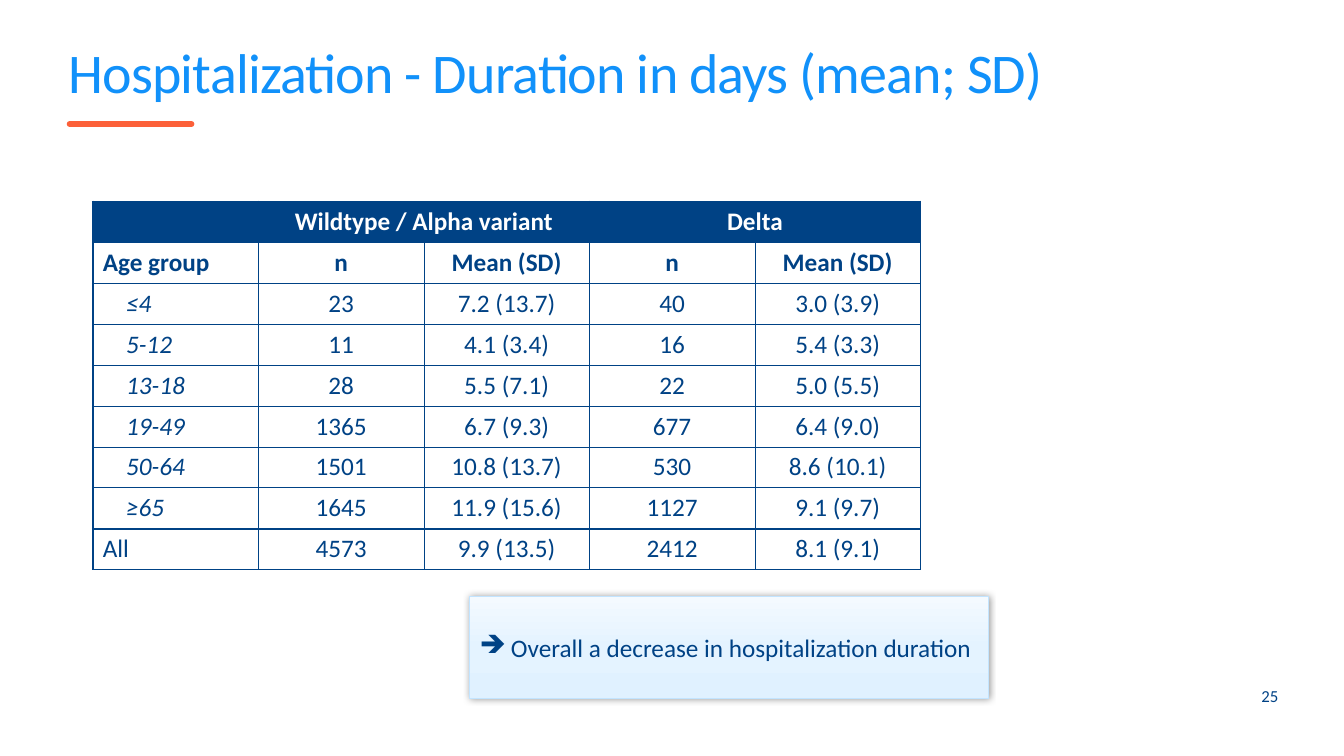
"""Builds the slide on the duration of hospitalization by age group."""
from pptx import Presentation
from pptx.dml.color import RGBColor
from pptx.enum import shapes, text
from pptx.oxml import parse_xml
from pptx.oxml.ns import nsdecls
from pptx.util import Emu, Inches, Pt

NAVY = RGBColor(0x00, 0x42, 0x85)
BLUE = RGBColor(0x11, 0x91, 0xFA)
ORANGE = RGBColor(0xFC, 0x60, 0x39)
PALE = RGBColor(0xC2, 0xE4, 0xFF)
WHITE = RGBColor(0xFF, 0xFF, 0xFF)
GRADIENT = [(0, "F4FAFF"), (50, "E4F3FF"), (100, "E0F1FF")]
ROWS = [
    ["", "Wildtype / Alpha variant", "", "Delta", ""],
    ["Age group", "n", "Mean (SD)", "n", "Mean (SD)"],
    ["≤4", "23", "7.2 (13.7)", "40", "3.0 (3.9)"],
    ["5-12", "11", "4.1 (3.4)", "16", "5.4 (3.3)"],
    ["13-18", "28", "5.5 (7.1)", "22", "5.0 (5.5)"],
    ["19-49", "1365", "6.7 (9.3)", "677", "6.4 (9.0)"],
    ["50-64", "1501", "10.8 (13.7)", "530", "8.6 (10.1)"],
    ["≥65", "1645", "11.9 (15.6)", "1127", "9.1 (9.7)"],
    ["All", "4573", "9.9 (13.5)", "2412", "8.1 (9.1)"],
]
COL_EDGES = [1.5, 1, 0.5, 1, 0.5, 1]
ROW_EDGES = [1.5] + [0.5] * 7 + [1.5, 1.5]


def write(p, words, size, color, **formats):
    r = p.add_run()
    r.text = words
    r.font.color.rgb = color
    for name, value in {"name": "Calibri", "size": Pt(size), **formats}.items():
        setattr(r.font, name, value)
    return r


def set_frame(tf, **formats):
    margins = dict.fromkeys(["margin_left", "margin_top", "margin_right", "margin_bottom"], 0)
    for name, value in {**margins, **formats}.items():
        setattr(tf, name, value)


prs = Presentation()
prs.slide_width, prs.slide_height = Inches(13.33), Inches(7.5)
s = prs.slides.add_slide(prs.slide_layouts[5])

rule = s.shapes.add_connector(shapes.MSO_CONNECTOR.STRAIGHT, Inches(0.69), Inches(1.23),
                              Inches(1.9), Inches(1.23))
rule.line.color.rgb = ORANGE
rule.line.width = Pt(4)
rule.line._get_or_add_ln().set("cap", "rnd")
rule._element.spPr.append(parse_xml(f"<a:effectLst {nsdecls('a')}/>"))

title = s.shapes.title
title.left, title.top, title.width, title.height = map(Inches, (0.68, 0.5, 12, 0.72))
tf = title.text_frame
set_frame(tf, word_wrap=True, auto_size=text.MSO_AUTO_SIZE.NONE,
          vertical_anchor=text.MSO_ANCHOR.TOP)
p = tf.paragraphs[0]
p.alignment = text.PP_ALIGN.LEFT
p.line_spacing = 0.8
r = write(p, "Hospitalization - Duration in days (mean; SD)", 40, BLUE)
r.font._element.set("spc", "-60")

frame = s.shapes.add_table(len(ROWS), len(ROWS[0]), Inches(0.92), Inches(2),
                           Inches(8.21), Inches(3.65))
table = frame.table
for i, row in enumerate(ROWS):
    for j, words in enumerate(row):
        cell = table.cell(i, j)
        tcPr = cell._tc.get_or_add_tcPr()
        edges = {"L": COL_EDGES[j], "R": COL_EDGES[j + 1],
                 "T": ROW_EDGES[i], "B": ROW_EDGES[i + 1]}
        for side, width in edges.items():
            tcPr.append(parse_xml(
                f'<a:ln{side} {nsdecls("a")} w="{Pt(width)}"><a:solidFill>'
                f'<a:srgbClr val="{NAVY}"/></a:solidFill></a:ln{side}>'))
        cell.fill.solid()
        cell.fill.fore_color.rgb = NAVY if i == 0 else WHITE
        age = j == 0 and 2 <= i < len(ROWS) - 1
        if age:
            cell.margin_left = Inches(0.33)
        p = cell.text_frame.paragraphs[0]
        p.alignment = text.PP_ALIGN.CENTER if j else text.PP_ALIGN.LEFT
        if words:
            write(p, words, 18, NAVY if i else WHITE, bold=i < 2, italic=age)
for j in (1, 3):
    table.cell(0, j).merge(table.cell(0, j + 1))

number = s.shapes.add_textbox(Inches(12.28), Inches(6.77), Inches(0.4), Inches(0.27))
tf = number.text_frame
set_frame(tf, word_wrap=True, vertical_anchor=text.MSO_ANCHOR.MIDDLE)
p = tf.paragraphs[0]
p.alignment = text.PP_ALIGN.RIGHT
write(p, "25", 12, NAVY)

sp = s.shapes.add_shape(shapes.MSO_SHAPE.RECTANGLE, Inches(4.66), Inches(5.92),
                        Inches(5.14), Inches(1.01))
sp.line.color.rgb = PALE
sp.line.width = Pt(0.5)
stops = "".join(f'<a:gs pos="{pos * 1000}"><a:srgbClr val="{color}"/></a:gs>'
                for pos, color in GRADIENT)
spPr = sp._element.spPr
spPr.insert(2, parse_xml(f'<a:gradFill {nsdecls("a")}><a:gsLst>{stops}</a:gsLst>'
                         '<a:lin ang="5400000" scaled="0"/></a:gradFill>'))
spPr.append(parse_xml(
    f'<a:effectLst {nsdecls("a")}><a:outerShdw blurRad="{Pt(5)}" dist="0" dir="0">'
    '<a:srgbClr val="000000"><a:alpha val="40000"/></a:srgbClr></a:outerShdw></a:effectLst>'))
tf = sp.text_frame
tf.word_wrap = False
tf.vertical_anchor = text.MSO_ANCHOR.MIDDLE
p = tf.paragraphs[0]
p.alignment = text.PP_ALIGN.LEFT
pPr = p._p.get_or_add_pPr()
indent = Emu(Inches(0.31))
pPr.set("marL", str(indent))
pPr.set("indent", str(-indent))
pPr.append(parse_xml(f'<a:buChar {nsdecls("a")} char="➔"/>'))
write(p, "Overall a decrease in hospitalization duration", 18, NAVY)

prs.save("out.pptx")
